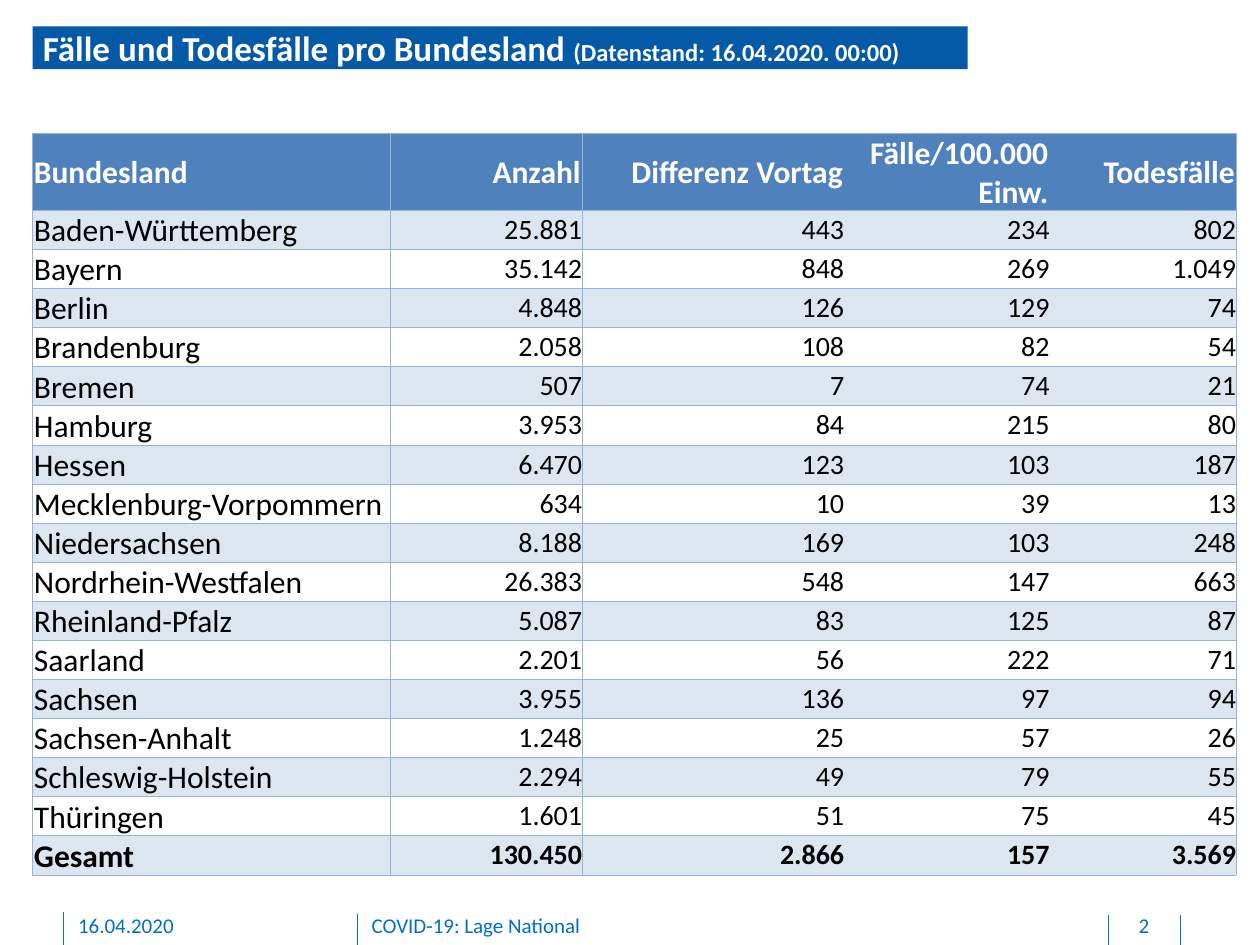
from lxml import etree
from pptx import Presentation, util as u
from pptx.dml.color import RGBColor
from pptx.enum import shapes, text
from pptx.oxml import ns

HUES = {"bar": "045AA6", "foot": "006EC7", "head": "4F81BD", "band": "DCE6F1",
        "rule": "95B3D7", "white": "FFFFFF", "black": "000000"}
NO_STYLE = "{2D5ABB26-0587-4C30-8999-92F81FD0307C}"


def style(font, size, hue, bold=False):
    font.name, font.size, font.bold = "Calibri", u.Pt(size), bold
    font.color.rgb = RGBColor.from_string(HUES[hue])


def edge(cell, side):
    line = etree.SubElement(cell._tc.get_or_add_tcPr(), ns.qn("a:ln" + side), w="6350")
    fill = etree.SubElement(line, ns.qn("a:solidFill"))
    etree.SubElement(fill, ns.qn("a:srgbClr"), val=HUES["rule"])


prs = Presentation()
prs.slide_width, prs.slide_height = u.Inches(10), u.Inches(7.5)
slide = prs.slides.add_slide(prs.slide_layouts[6])

# Footer rules
for x, top in [(2.84, 7.25), (0.5, 7.24), (9.37, 7.26), (8.8, 7.26)]:
    rule = slide.shapes.add_connector(shapes.MSO_CONNECTOR.STRAIGHT, u.Inches(x),
                                      u.Inches(top), u.Inches(x), u.Inches(7.5))
    rule.line.width = u.Pt(0.5)
    rule.line.color.rgb = RGBColor.from_string(HUES["foot"])
    etree.SubElement(rule._element.spPr, ns.qn("a:effectLst"))

# Footer texts
for x, width, words, align in [
    (0.62, 2.03, "16.04.2020", text.PP_ALIGN.LEFT),
    (2.95, 5.67, "COVID-19: Lage National", text.PP_ALIGN.LEFT),
    (8.81, 0.54, "2", text.PP_ALIGN.CENTER),
]:
    box = slide.shapes.add_textbox(u.Inches(x), u.Inches(7.24), u.Inches(width), u.Inches(0.21))
    frame = box.text_frame
    frame.word_wrap = True
    frame.margin_left = frame.margin_right = frame.margin_top = 0
    frame.margin_bottom = u.Inches(0.05)
    para = frame.paragraphs[0]
    para.text, para.alignment = words, align
    style(para.font, 12, "foot")

# Title bar
bar = slide.shapes.add_shape(shapes.MSO_SHAPE.RECTANGLE, u.Inches(0.26), u.Inches(0.21),
                             u.Inches(7.42), u.Inches(0.34))
bar.shadow.inherit = False
bar.fill.solid()
bar.fill.fore_color.rgb = RGBColor.from_string(HUES["bar"])
bar.line.fill.background()
frame = bar.text_frame
frame.word_wrap = True
frame.auto_size = text.MSO_AUTO_SIZE.SHAPE_TO_FIT_TEXT
frame.vertical_anchor = text.MSO_ANCHOR.MIDDLE
frame.margin_left = u.Inches(0.08)
frame.margin_right = frame.margin_top = frame.margin_bottom = 0
para = frame.paragraphs[0]
para.alignment = text.PP_ALIGN.LEFT
for words, size in [("Fälle und Todesfälle pro Bundesland ", 20),
                    ("(Datenstand: 16.04.2020. 00:00)", 14)]:
    run = para.add_run()
    run.text = words
    style(run.font, size, "white", True)

# Table of states
ROWS = [
    ("Bundesland", "Anzahl", "Differenz Vortag", "Fälle/100.000 Einw.", "Todesfälle"),
    ("Baden-Württemberg", "25.881", "443", "234", "802"),
    ("Bayern", "35.142", "848", "269", "1.049"),
    ("Berlin", "4.848", "126", "129", "74"),
    ("Brandenburg", "2.058", "108", "82", "54"),
    ("Bremen", "507", "7", "74", "21"),
    ("Hamburg", "3.953", "84", "215", "80"),
    ("Hessen", "6.470", "123", "103", "187"),
    ("Mecklenburg-Vorpommern", "634", "10", "39", "13"),
    ("Niedersachsen", "8.188", "169", "103", "248"),
    ("Nordrhein-Westfalen", "26.383", "548", "147", "663"),
    ("Rheinland-Pfalz", "5.087", "83", "125", "87"),
    ("Saarland", "2.201", "56", "222", "71"),
    ("Sachsen", "3.955", "136", "97", "94"),
    ("Sachsen-Anhalt", "1.248", "25", "57", "26"),
    ("Schleswig-Holstein", "2.294", "49", "79", "55"),
    ("Thüringen", "1.601", "51", "75", "45"),
    ("Gesamt", "130.450", "2.866", "157", "3.569"),
]
WIDTHS = [2.84, 1.52, 2.08, 1.63, 1.48]
SIDES = [("L", "R", "T", "B"), ("L", "T", "B"), ("T", "B"), ("T", "B"), ("R", "T", "B")]
last = len(ROWS) - 1

grid = slide.shapes.add_table(len(ROWS), len(WIDTHS), u.Inches(0.26), u.Inches(1.06),
                              u.Inches(9.56), u.Inches(5.88))
table = grid.table
table.first_row = table.horz_banding = False
table._tbl.tblPr.find(ns.qn("a:tableStyleId")).text = NO_STYLE
for col, width in zip(table.columns, WIDTHS):
    col.width = u.Inches(width)

for r, row in enumerate(ROWS):
    table.rows[r].height = u.Inches(0.28 if r else 0.55)
    for c, words in enumerate(row):
        cell = table.cell(r, c)
        label = r == 0 or c == 0
        cell.vertical_anchor = text.MSO_ANCHOR.MIDDLE
        cell.margin_left = cell.margin_right = cell.margin_top = u.Inches(0.01 if label else 0)
        cell.margin_bottom = 0
        for side in SIDES[c]:
            edge(cell, side)
        if r == 0 or r % 2:
            cell.fill.solid()
            cell.fill.fore_color.rgb = RGBColor.from_string(HUES["band" if r else "head"])
        else:
            cell.fill.background()
        para = cell.text_frame.paragraphs[0]
        para.text = words
        para.alignment = text.PP_ALIGN.RIGHT if c else text.PP_ALIGN.LEFT
        style(para.font, 18 if label else 16, "black" if r else "white", r in (0, last))

prs.save("out.pptx")
